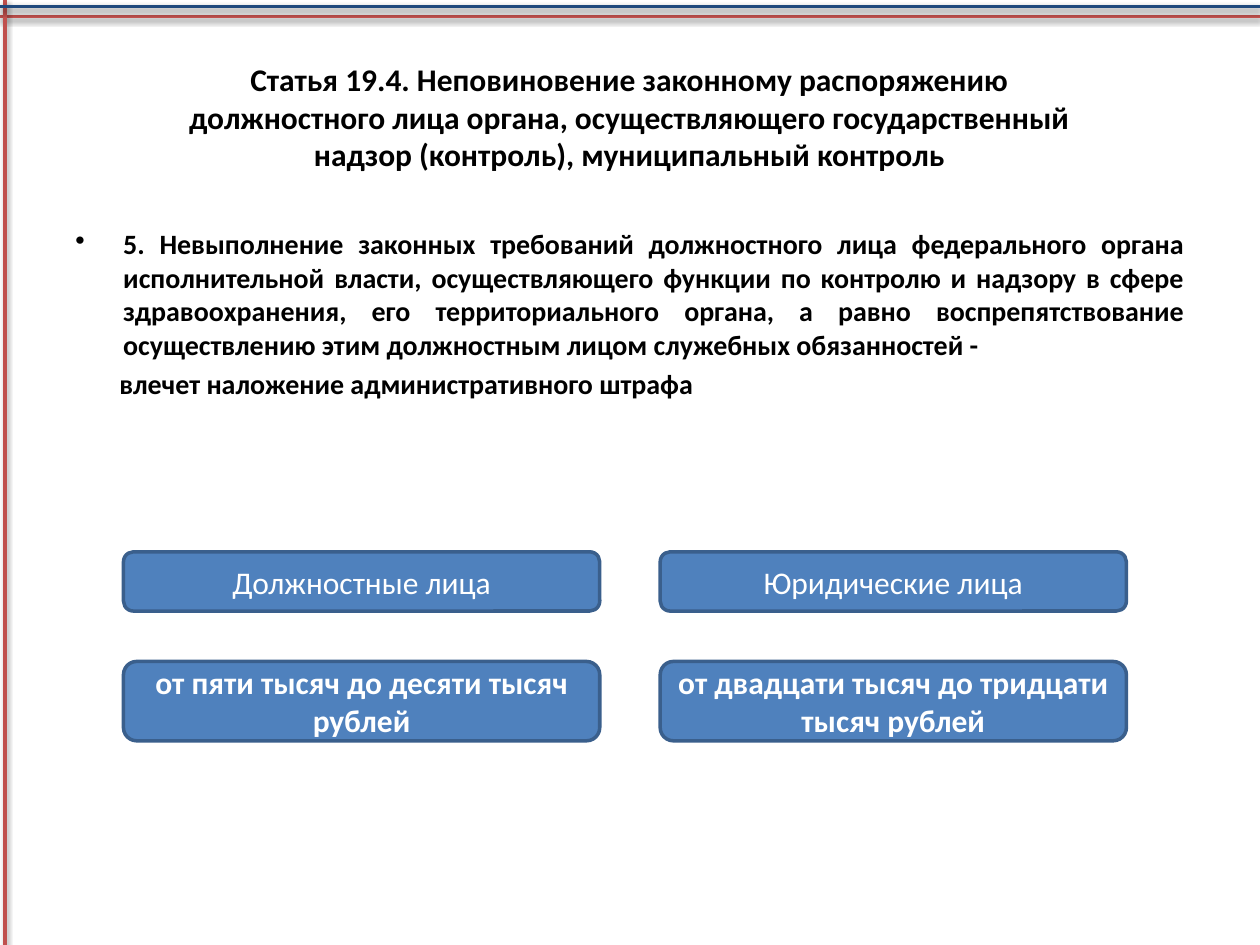
import dataclasses

import pptx
import pptx.dml.color
import pptx.enum.shapes
import pptx.enum.text
import pptx.oxml
import pptx.oxml.ns
import pptx.util
from pptx.util import Inches

ALIGN = pptx.enum.text.PP_ALIGN
ANCHOR = pptx.enum.text.MSO_ANCHOR


@dataclasses.dataclass(frozen=True)
class Theme:
    font: str = "Calibri"
    ink: str = "000000"
    light: str = "FFFFFF"
    fill: str = "4F81BD"
    outline: str = "3A5F8C"
    red: str = "C0504D"
    navy: str = "1F497D"
    heading: int = 18
    body: int = 16
    stroke: int = 2


THEME = Theme()

SHADOW = (
    f'<a:effectLst {pptx.oxml.ns.nsdecls("a")}>'
    '<a:outerShdw blurRad="39370" dist="20320" dir="5400000" rotWithShape="0">'
    '<a:srgbClr val="000000"><a:alpha val="38000"/></a:srgbClr>'
    '</a:outerShdw></a:effectLst>'
)


def rgb(value):
    return pptx.dml.color.RGBColor.from_string(value)


def write(paragraph, text, *, size, color=THEME.ink, bold=False, align=ALIGN.CENTER,
          margin=0, hanging=0, bullet=None, before=0):
    properties = paragraph._p.get_or_add_pPr()
    properties.set("marL", str(Inches(margin)))
    properties.set("indent", str(Inches(-hanging)))
    if bullet:
        mark = pptx.oxml.parse_xml(
            f'<a:buChar {pptx.oxml.ns.nsdecls("a")} char="{bullet}"/>')
        properties.append(mark)
    paragraph.alignment = align
    if before:
        paragraph.space_before = pptx.util.Pt(before)
    run = paragraph.add_run()
    run.text = text
    run.font.name = THEME.font
    run.font.size = pptx.util.Pt(size)
    run.font.bold = bold
    run.font.color.rgb = rgb(color)


def add_text_frame(slide, box, anchor):
    frame = slide.shapes.add_textbox(*map(Inches, box)).text_frame
    frame.word_wrap = True
    frame.vertical_anchor = anchor
    return frame


def add_rule(slide, start, end, color):
    rule = slide.shapes.add_connector(
        pptx.enum.shapes.MSO_CONNECTOR.STRAIGHT, *map(Inches, start + end))
    rule.line.color.rgb = rgb(color)
    rule.line.width = pptx.util.Pt(THEME.stroke)
    rule._element.spPr.append(pptx.oxml.parse_xml(SHADOW))


def add_frame_rules(slide, width, height):
    add_rule(slide, (width, 0.13), (0, 0.13), THEME.red)
    add_rule(slide, (0.04, 0), (0.04, height), THEME.red)
    add_rule(slide, (0, 0.05), (width, 0.05), THEME.navy)


def add_title(slide, box, text):
    frame = add_text_frame(slide, box, ANCHOR.MIDDLE)
    write(frame.paragraphs[0], text, size=THEME.heading, bold=True)


def add_offence(slide, box, offence, consequence):
    frame = add_text_frame(slide, box, ANCHOR.TOP)
    style = dict(size=THEME.body, bold=True, align=ALIGN.JUSTIFY)
    write(frame.paragraphs[0], offence, margin=0.38, hanging=0.38, bullet="•", **style)
    write(frame.add_paragraph(), consequence, margin=0.35, before=3.2, **style)


def add_card(slide, box, text, bold):
    card = slide.shapes.add_shape(
        pptx.enum.shapes.MSO_SHAPE.ROUNDED_RECTANGLE, *map(Inches, box))
    card.shadow.inherit = False
    card.fill.solid()
    card.fill.fore_color.rgb = rgb(THEME.fill)
    card.line.color.rgb = rgb(THEME.outline)
    card.line.width = pptx.util.Pt(THEME.stroke)
    frame = card.text_frame
    frame.word_wrap = True
    frame.vertical_anchor = ANCHOR.MIDDLE
    write(frame.paragraphs[0], text, size=THEME.heading, color=THEME.light, bold=bold)


def add_penalties(slide, box, penalties):
    left, top, width, height = box
    columns = ((left, 3.78), (left + width - 3.7, 3.7))
    rows = ((top, 0.47, False), (top + height - 0.63, 0.63, True))
    for row, (y, card_height, bold) in enumerate(rows):
        for (x, card_width), penalty in zip(columns, penalties):
            add_card(slide, (x, y, card_width, card_height), penalty[row], bold)


def main():
    presentation = pptx.Presentation()
    width, height = 10, 7.5
    presentation.slide_width = Inches(width)
    presentation.slide_height = Inches(height)
    slide = presentation.slides.add_slide(presentation.slide_layouts[6])

    add_frame_rules(slide, width, height)
    add_offence(
        slide, (0.5, 1.75, 9, 4.95),
        "5. Невыполнение законных требований должностного лица федерального органа "
        "исполнительной власти, осуществляющего функции по контролю и надзору в сфере "
        "здравоохранения, его территориального органа, а равно воспрепятствование "
        "осуществлению этим должностным лицом служебных обязанностей -",
        "влечет наложение административного штрафа")
    add_title(
        slide, (1.29, 0.3, 7.41, 1.25),
        "Статья 19.4. Неповиновение законному распоряжению должностного лица органа, "
        "осуществляющего государственный надзор (контроль), муниципальный контроль")
    add_penalties(slide, (0.98, 4.38, 7.96, 1.5), (
        ("Должностные лица", "от пяти тысяч до десяти тысяч рублей"),
        ("Юридические лица", "от двадцати тысяч до тридцати тысяч рублей"),
    ))
    presentation.save("out.pptx")


if __name__ == "__main__":
    main()
